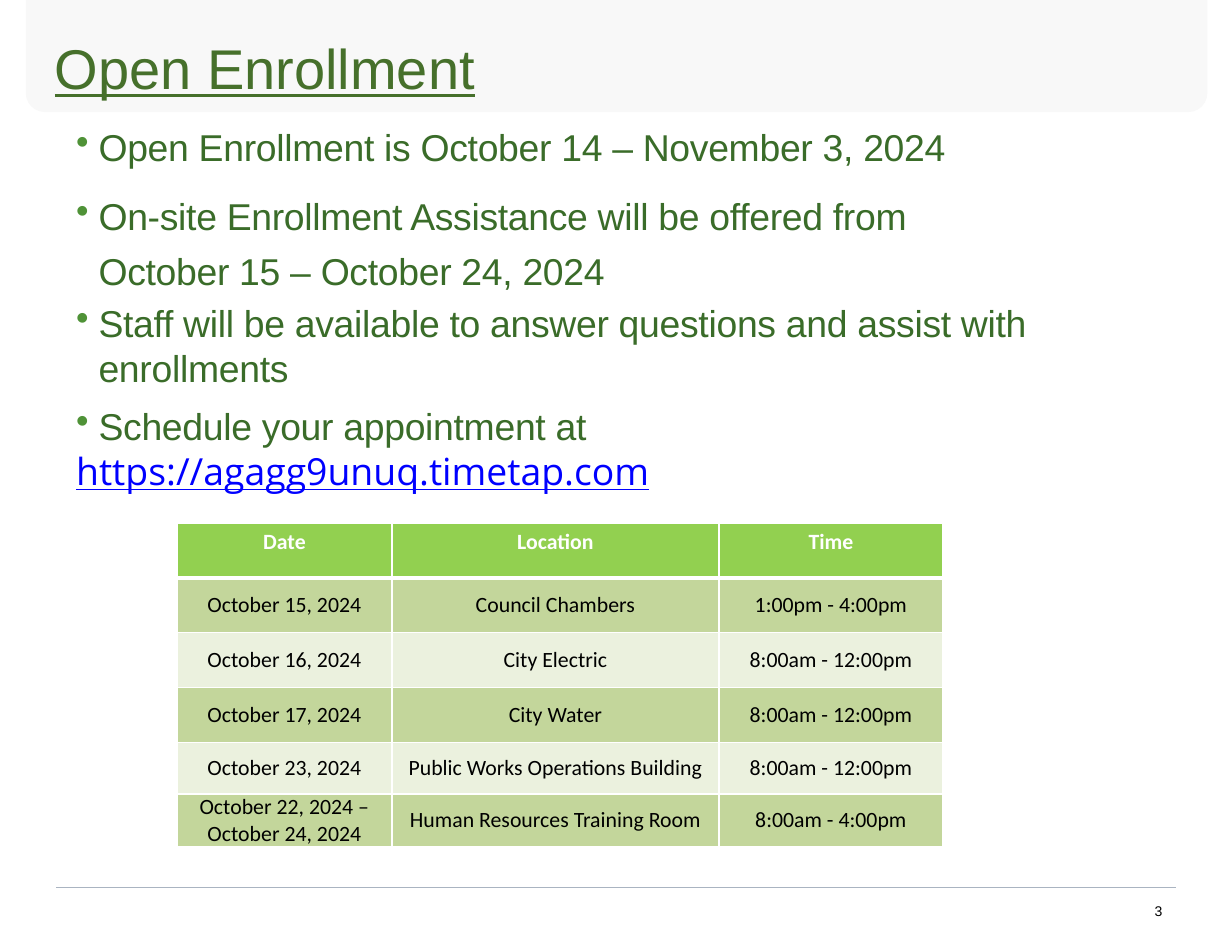
"""Build the Open Enrollment slide with its schedule table."""
from lxml.etree import SubElement as Sub
from pptx import Presentation
from pptx.dml.color import RGBColor as RGB
from pptx.enum.shapes import MSO_CONNECTOR as Link, MSO_SHAPE as Shape
from pptx.enum.text import MSO_ANCHOR as Anchor, PP_ALIGN as Align
from pptx.oxml.ns import qn
from pptx.util import Inches, Pt

WHITE = RGB(0xFF, 0xFF, 0xFF)
BLACK = RGB(0, 0, 0)
PALE = RGB(0xF8, 0xF8, 0xF8)
RULE = RGB(0xAA, 0xB4, 0xC1)
TITLE = RGB(0x46, 0x70, 0x2B)
GREEN = RGB(0x3A, 0x6C, 0x29)
DOT = RGB(0x4F, 0x92, 0x37)
BLUE = RGB(0, 0, 0xFF)
HEAD = RGB(0x92, 0xD0, 0x50)
BANDS = [RGB(0xEB, 0xF1, 0xDE), RGB(0xC3, 0xD6, 0x9B)]


def style(para, name, size, color, line=False):
    font = para.font
    font.name, font.size, font.underline = name, Pt(size), line
    font.color.rgb = color


def frame(left, top, width, height):
    box = slide.shapes.add_textbox(*map(Inches, (left, top, width, height)))
    text = box.text_frame
    text.word_wrap = True
    text.margin_left = text.margin_right = 0
    text.margin_top = text.margin_bottom = 0
    return text


deck = Presentation()
deck.slide_width, deck.slide_height = Inches(11), Inches(8.5)
slide = deck.slides.add_slide(deck.slide_layouts[6])

band = slide.shapes.add_shape(
    Shape.ROUND_2_SAME_RECTANGLE, Inches(0.23), 0, Inches(10.55), Inches(1))
band.rotation = 180
band.adjustments[0] = 0.17
band.shadow.inherit = False
band.fill.solid()
band.fill.fore_color.rgb = PALE
band.line.fill.background()

rule = slide.shapes.add_connector(
    Link.STRAIGHT, Inches(0.5), Inches(7.92), Inches(10.5), Inches(7.92))
rule.line.color.rgb = RULE
rule.line.width = Pt(0.25)
Sub(rule._element.spPr, qn("a:effectLst"))

para = frame(0.49, 0.3, 10.03, 0.61).paragraphs[0]
para.text = "Open Enrollment"
style(para, "Arial", 36, TITLE, True)

para = frame(10.31, 8.06, 0.1, 0.16).paragraphs[0]
para.text = "3"
style(para, "Arial", 9, BLACK)

items = [
    ("Open Enrollment is October 14 – November 3, 2024", 0, True),
    ("On-site Enrollment Assistance will be offered from", 15.5, True),
    ("October 15 – October 24, 2024", 6.5, False),
    ("Staff will be available to answer questions and assist with enrollments",
     5, True),
    ("Schedule your appointment at", 8.5, True),
]
body = frame(0.68, 1.11, 9.12, 3.4)
for spot, (words, gap, mark) in enumerate(items):
    para = body.add_paragraph() if spot else body.paragraphs[0]
    run = para.add_run()
    run.text = words
    run._r.get_or_add_rPr().set("spc", "-20")
    para.space_before = Pt(gap)
    prop = para._p.get_or_add_pPr()
    prop.set("marL", str(Inches(0.2)))
    if mark:
        prop.set("indent", str(-Inches(0.2)))
        Sub(Sub(prop, qn("a:buClr")), qn("a:srgbClr"), val=str(DOT))
        Sub(prop, qn("a:buChar"), char="•")
    style(para, "Arial", 24, GREEN)
para = body.add_paragraph()
para.text = "https://agagg9unuq.timetap.com"
style(para, "Open Sans", 24, BLUE, True)

rows = [
    ("Date", "Location", "Time"),
    ("October 15, 2024", "Council Chambers", "1:00pm - 4:00pm"),
    ("October 16, 2024", "City Electric", "8:00am - 12:00pm"),
    ("October 17, 2024", "City Water", "8:00am - 12:00pm"),
    ("October 23, 2024", "Public Works Operations Building",
     "8:00am - 12:00pm"),
    ("October 22, 2024 – October 24, 2024", "Human Resources Training Room",
     "8:00am - 4:00pm"),
]
grid = slide.shapes.add_table(
    len(rows), 3, Inches(1.58), Inches(4.67), Inches(6.84), Inches(2.88)).table
grid.horz_banding = False
for col, width in zip(grid.columns, (1.92, 2.92, 2)):
    col.width = Inches(width)
for r, row in enumerate(rows):
    grid.rows[r].height = Inches(0.49 if r < 4 else 0.46)
    for c, words in enumerate(row):
        cell = grid.cell(r, c)
        prop = cell._tc.get_or_add_tcPr()
        for side in "LRTB":
            thick = (r, side) in ((0, "B"), (1, "T"))
            edge = Sub(prop, qn("a:ln" + side), w=str(Pt(3 if thick else 1)))
            Sub(Sub(edge, qn("a:solidFill")), qn("a:srgbClr"), val=str(WHITE))
        cell.fill.solid()
        cell.fill.fore_color.rgb = BANDS[r % 2] if r else HEAD
        if r:
            cell.vertical_anchor = Anchor.MIDDLE
            cell.margin_left = cell.margin_right = Inches(0.07)
            cell.margin_top = cell.margin_bottom = 0
        para = cell.text_frame.paragraphs[0]
        para.text = words
        para.alignment = Align.CENTER
        style(para, "Calibri", 14, BLACK if r else WHITE)
        para.font.bold = r == 0

deck.save("out.pptx")
